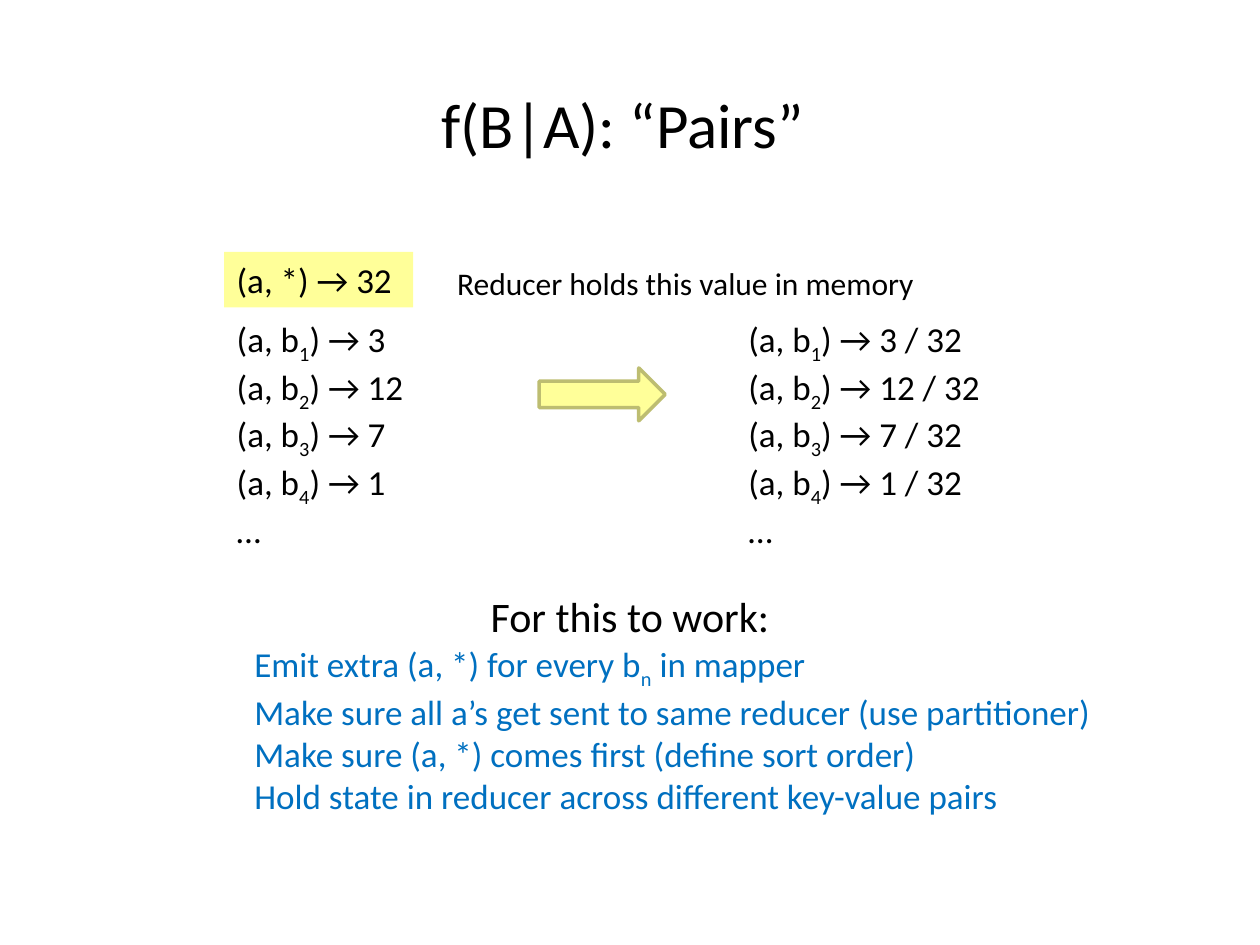
from pptx import Presentation
from pptx import util as u
from pptx.dml.color import RGBColor
from pptx.enum import shapes, text

BLACK, BLUE, YELLOW, OLIVE = "000000", "0070C0", "FFFF99", "BDBD71"


def rgb(value):
    return RGBColor.from_string(value)


class Deck:
    font = "Calibri"

    def __init__(self, prs):
        self.slide = prs.slides.add_slide(prs.slide_layouts[5])

    def place(self, sp, box):
        sp.left, sp.top, sp.width, sp.height = map(u.Inches, box)

    def fill_paragraph(self, p, line, size, color, align):
        """Each second part between ~ marks is a subscript."""
        p.alignment = align
        p.font.name, p.font.size = self.font, u.Pt(size)
        p.font.color.rgb = rgb(color)
        for i, part in enumerate(line.split("~")):
            r = p.add_run()
            r.text = part
            if i % 2:
                r._r.get_or_add_rPr().set("baseline", "-25000")

    def add_title(self, box, line, size):
        sp = self.slide.shapes.title
        self.place(sp, box)
        tf = sp.text_frame
        tf.vertical_anchor = text.MSO_ANCHOR.MIDDLE
        self.fill_paragraph(tf.paragraphs[0], line, size, BLACK, text.PP_ALIGN.CENTER)

    def add_text(self, box, lines, size=20, color=BLACK, align=text.PP_ALIGN.LEFT,
                 wrap=False, fill=None):
        sp = self.slide.shapes.add_textbox(*map(u.Inches, box))
        if fill:
            sp.fill.solid()
            sp.fill.fore_color.rgb = rgb(fill)
        tf = sp.text_frame
        tf.word_wrap = wrap
        tf.auto_size = text.MSO_AUTO_SIZE.SHAPE_TO_FIT_TEXT
        for i, line in enumerate(lines):
            p = tf.add_paragraph() if i else tf.paragraphs[0]
            self.fill_paragraph(p, line, size, color, align)

    def add_arrow(self, box, fill, line, width):
        sp = self.slide.shapes.add_shape(shapes.MSO_SHAPE.RIGHT_ARROW, *map(u.Inches, box))
        sp.shadow.inherit = False
        sp.fill.solid()
        sp.fill.fore_color.rgb = rgb(fill)
        sp.line.color.rgb = rgb(line)
        sp.line.width = u.Pt(width)


def pairs(suffix=""):
    counts = [3, 12, 7, 1]
    return [f"(a, b~{n}~) → {c}{suffix}" for n, c in enumerate(counts, 1)] + ["…"]


def main():
    prs = Presentation()
    prs.slide_width, prs.slide_height = u.Inches(10), u.Inches(7.5)
    deck = Deck(prs)

    deck.add_title((0, 0.6, 10, 0.75), "f(B|A): “Pairs” ", 36)
    deck.add_text((1.78, 2.47, 1.61, 1.78), pairs())
    deck.add_arrow((4.28, 2.92, 1, 0.42), YELLOW, OLIVE, 2)
    deck.add_text((1.78, 2, 1.5, 0.44), ["(a, *) → 32"], fill=YELLOW)
    deck.add_text((5.84, 2.47, 2.05, 1.78), pairs(" / 32"))
    deck.add_text((3.53, 2.05, 3.89, 0.4), ["Reducer holds this value in memory"], size=18)
    deck.add_text((0, 4.64, 10, 0.5), ["For this to work:"], size=24,
                  align=text.PP_ALIGN.CENTER, wrap=True)
    deck.add_text((1.92, 5.05, 7, 1.45), [
        "Emit extra (a, *) for every b~n~ in mapper",
        "Make sure all a’s get sent to same reducer (use partitioner)",
        "Make sure (a, *) comes first (define sort order)",
        "Hold state in reducer across different key-value pairs",
    ], color=BLUE, wrap=True)

    prs.save("out.pptx")


if __name__ == "__main__":
    main()
